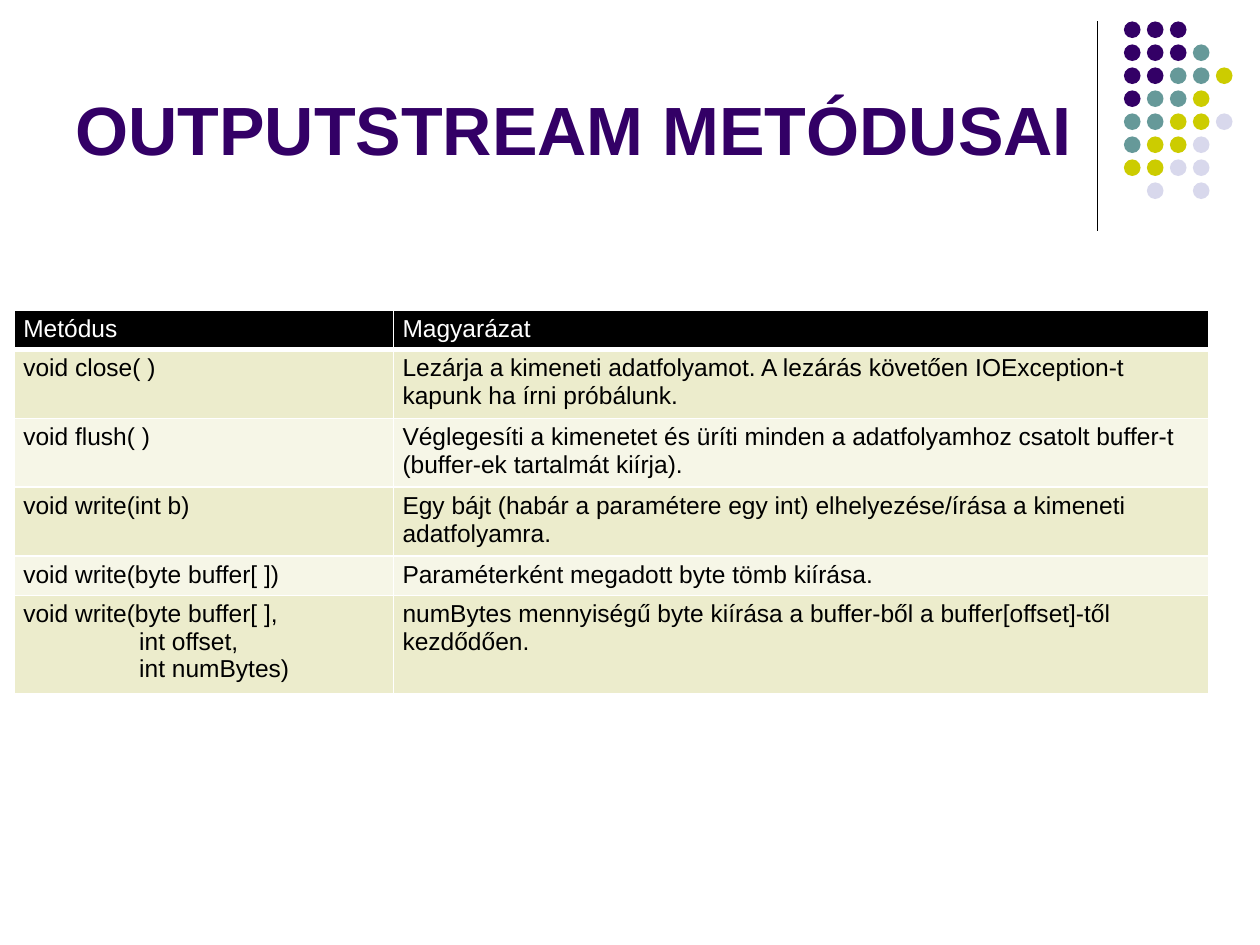
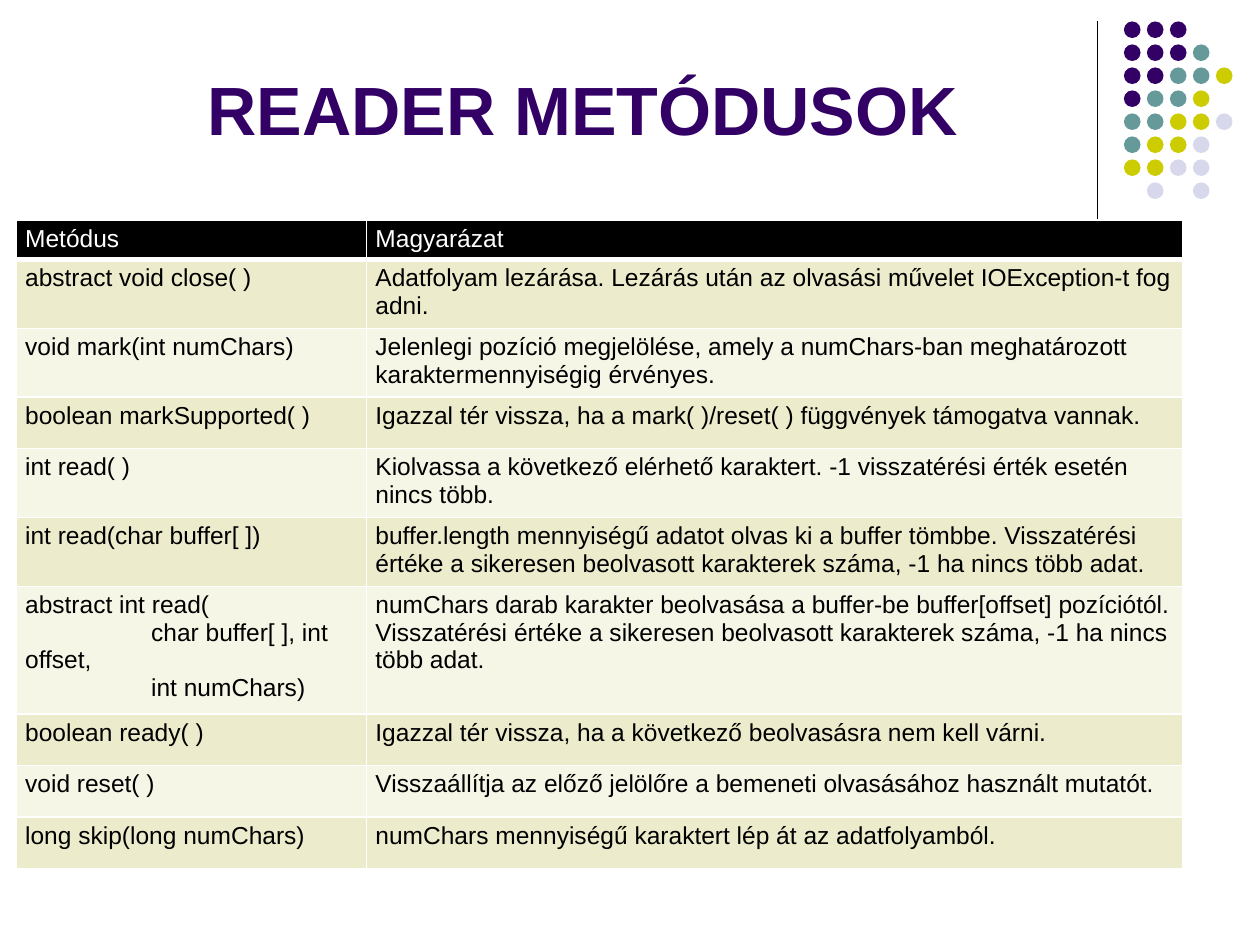
from dataclasses import dataclass

from pptx import Presentation
from pptx.dml.color import RGBColor as RGB
from pptx.enum.shapes import MSO_CONNECTOR as CONN, MSO_SHAPE as SHAPE
from pptx.enum.text import MSO_ANCHOR as ANCHOR, PP_ALIGN as ALIGN
from pptx.oxml.ns import qn
from pptx.util import Inches, Pt
from lxml.etree import SubElement

# Grid: 100 columns by 75 rows of square cells
SLIDE_W, SLIDE_H = Inches(10), Inches(7.5)
COLS = 100
UNIT = SLIDE_W / COLS


def grid(n):
    """Length of n grid cells."""
    return round(n * UNIT)


@dataclass(frozen=True)
class Box:
    left: float
    top: float
    width: float
    height: float = 0

    def lengths(self):
        return [grid(n) for n in (self.left, self.top, self.width, self.height)]


@dataclass(frozen=True)
class Theme:
    font: str = "Arial"
    title_size: float = 39
    table_size: float = 14
    purple: str = "330066"
    teal: str = "669999"
    lime: str = "CCCC00"
    lilac: str = "D8D8EC"
    black: str = "000000"
    white: str = "FFFFFF"
    bands: tuple = ("ECECCC", "F6F6E7")
    rule: float = 0.75
    border: float = 1
    header_border: float = 3


THEME = Theme()
DOT = 1.32
DOT_ROWS = ("PPP..", "PPPT.", "PPTTY", "PTTY.", "TTYYL", "TYYL.", "YYLL.", ".L.L.")
DOT_COLORS = {"P": THEME.purple, "T": THEME.teal, "Y": THEME.lime, "L": THEME.lilac}
DECOR = Box(87.1, 1.7, 10.72, 16.6)
HEADER = ("Metódus", "Magyarázat")


def add_run(p, text, size, color, bold=False):
    r = p.add_run()
    r.text = text
    f = r.font
    f.name, f.size, f.bold = THEME.font, Pt(size), bold
    f.color.rgb = RGB.from_string(color)


def add_decor(slide, box):
    """Vertical rule on the left edge of the box, dot pattern beside it."""
    x, y, _, h = box.lengths()
    line = slide.shapes.add_connector(CONN.STRAIGHT, x, y, x, y + h)
    line.line.width = Pt(THEME.rule)
    line.line.color.rgb = RGB.from_string(THEME.black)
    SubElement(line._element.spPr, qn("a:effectLst"))

    dots_left = box.left + 2.1
    pitch = (box.left + box.width - DOT - dots_left) / (len(DOT_ROWS[0]) - 1)
    group = slide.shapes.add_group_shape()
    for i, row in enumerate(DOT_ROWS):
        for j, key in enumerate(row):
            if key == ".":
                continue
            dot = Box(dots_left + j * pitch, box.top + i * pitch, DOT, DOT)
            sp = group.shapes.add_shape(SHAPE.OVAL, *dot.lengths())
            sp.shadow.inherit = False
            sp.fill.solid()
            sp.fill.fore_color.rgb = RGB.from_string(DOT_COLORS[key])
            sp.line.fill.background()


def add_title(slide, box, text, align):
    tf = slide.shapes.add_textbox(*box.lengths()).text_frame
    tf.word_wrap = True
    tf.vertical_anchor = ANCHOR.BOTTOM
    p = tf.paragraphs[0]
    p.alignment = align
    add_run(p, text, THEME.title_size, THEME.purple, bold=True)


def set_borders(cell, bottom):
    tc_pr = cell._tc.get_or_add_tcPr()
    widths = {"lnL": THEME.border, "lnR": THEME.border,
              "lnT": THEME.border, "lnB": bottom}
    for side, width in widths.items():
        ln = SubElement(tc_pr, qn(f"a:{side}"), w=str(Pt(width)))
        fill = SubElement(ln, qn("a:solidFill"))
        SubElement(fill, qn("a:srgbClr"), val=THEME.white)


def fill_cell(cell, text, fill, color, indent, bottom):
    """One paragraph per line; a leading tab marks a first-line indent."""
    set_borders(cell, bottom)
    cell.fill.solid()
    cell.fill.fore_color.rgb = RGB.from_string(fill)
    cell.margin_left = cell.margin_right = grid(0.7)
    cell.margin_top = cell.margin_bottom = grid(0.4)
    tf = cell.text_frame
    for n, line in enumerate(text.split("\n")):
        p = tf.add_paragraph() if n else tf.paragraphs[0]
        if line.startswith("\t"):
            p_pr = p._p.get_or_add_pPr()
            p_pr.set("marL", "0")
            p_pr.set("indent", str(grid(indent)))
        add_run(p, line.lstrip("\t"), THEME.table_size, color)


def add_method_table(slide, box, first_col, heights, methods, indent):
    rows = (HEADER, *methods)
    full = Box(box.left, box.top, box.width, sum(heights))
    table = slide.shapes.add_table(len(rows), 2, *full.lengths()).table
    for col, width in zip(table.columns, (first_col, box.width - first_col)):
        col.width = grid(width)
    for i, (texts, height) in enumerate(zip(rows, heights)):
        table.rows[i].height = grid(height)
        if i:
            look = (THEME.bands[(i - 1) % 2], THEME.black, indent, THEME.border)
        else:
            look = (THEME.black, THEME.white, indent, THEME.header_border)
        for j, text in enumerate(texts):
            fill_cell(table.cell(i, j), text, *look)


OUTPUT_METHODS = (
    ("void close( )", "Lezárja a kimeneti adatfolyamot. A lezárás követően "
     "IOException-t kapunk ha írni próbálunk."),
    ("void flush( )", "Véglegesíti a kimenetet és üríti minden a adatfolyamhoz "
     "csatolt buffer-t (buffer-ek tartalmát kiírja)."),
    ("void write(int b)", "Egy bájt (habár a paramétere egy int) "
     "elhelyezése/írása a kimeneti adatfolyamra."),
    ("void write(byte buffer[ ])", "Paraméterként megadott byte tömb kiírása."),
    ("void write(byte buffer[ ],\n\tint offset,\n\tint numBytes)",
     "numBytes mennyiségű byte kiírása a buffer-ből a buffer[offset]-től kezdődően."),
)
READER_METHODS = (
    ("abstract void close( )", "Adatfolyam lezárása. Lezárás után az olvasási "
     "művelet IOException-t fog adni."),
    ("void mark(int numChars)", "Jelenlegi pozíció megjelölése, amely a "
     "numChars-ban meghatározott karaktermennyiségig érvényes."),
    ("boolean markSupported( )", "Igazzal tér vissza, ha a mark( )/reset( ) "
     "függvények támogatva vannak."),
    ("int read( )", "Kiolvassa a következő elérhető karaktert. -1 visszatérési "
     "érték esetén nincs több."),
    ("int read(char buffer[ ])", "buffer.length mennyiségű adatot olvas ki a buffer "
     "tömbbe. Visszatérési értéke a sikeresen beolvasott karakterek száma, "
     "-1 ha nincs több adat."),
    ("abstract int read(\n\tchar buffer[ ], int offset,\n\tint numChars)",
     "numChars darab karakter beolvasása a buffer-be buffer[offset] pozíciótól. "
     "Visszatérési értéke a sikeresen beolvasott karakterek száma, "
     "-1 ha nincs több adat."),
    ("boolean ready( )", "Igazzal tér vissza, ha a következő beolvasásra nem kell várni."),
    ("void reset( )", "Visszaállítja az előző jelölőre a bemeneti olvasásához "
     "használt mutatót."),
    ("long skip(long numChars)", "numChars mennyiségű karaktert lép át az adatfolyamból."),
)


def add_method_slide(prs, title, table):
    slide = prs.slides.add_slide(prs.slide_layouts[6])
    add_decor(slide, DECOR)
    add_title(slide, **title)
    add_method_table(slide, **table)


def main():
    prs = Presentation()
    prs.slide_width, prs.slide_height = SLIDE_W, SLIDE_H
    # Row heights: one line, two lines, roomy single line
    one, two, roomy = 3.05, 5.25, 4.08
    add_method_slide(
        prs,
        dict(box=Box(5, 6.1, 82.5, 7.8), text="OUTPUTSTREAM METÓDUSAI",
             align=ALIGN.LEFT),
        dict(box=Box(1.15, 24.6, 94.8), first_col=30.1,
             heights=(one, two, two, two, one, 7.3),
             methods=OUTPUT_METHODS, indent=9.2))
    add_method_slide(
        prs,
        dict(box=Box(5, 4.4, 82.5, 7.9), text="READER METÓDUSOK",
             align=ALIGN.CENTER),
        dict(box=Box(1.3, 17.45, 92.6), first_col=27.8,
             heights=(one, two, two, roomy, two, two, 9.75, roomy, roomy, roomy),
             methods=READER_METHODS, indent=10))
    prs.save("out.pptx")


if __name__ == "__main__":
    main()
